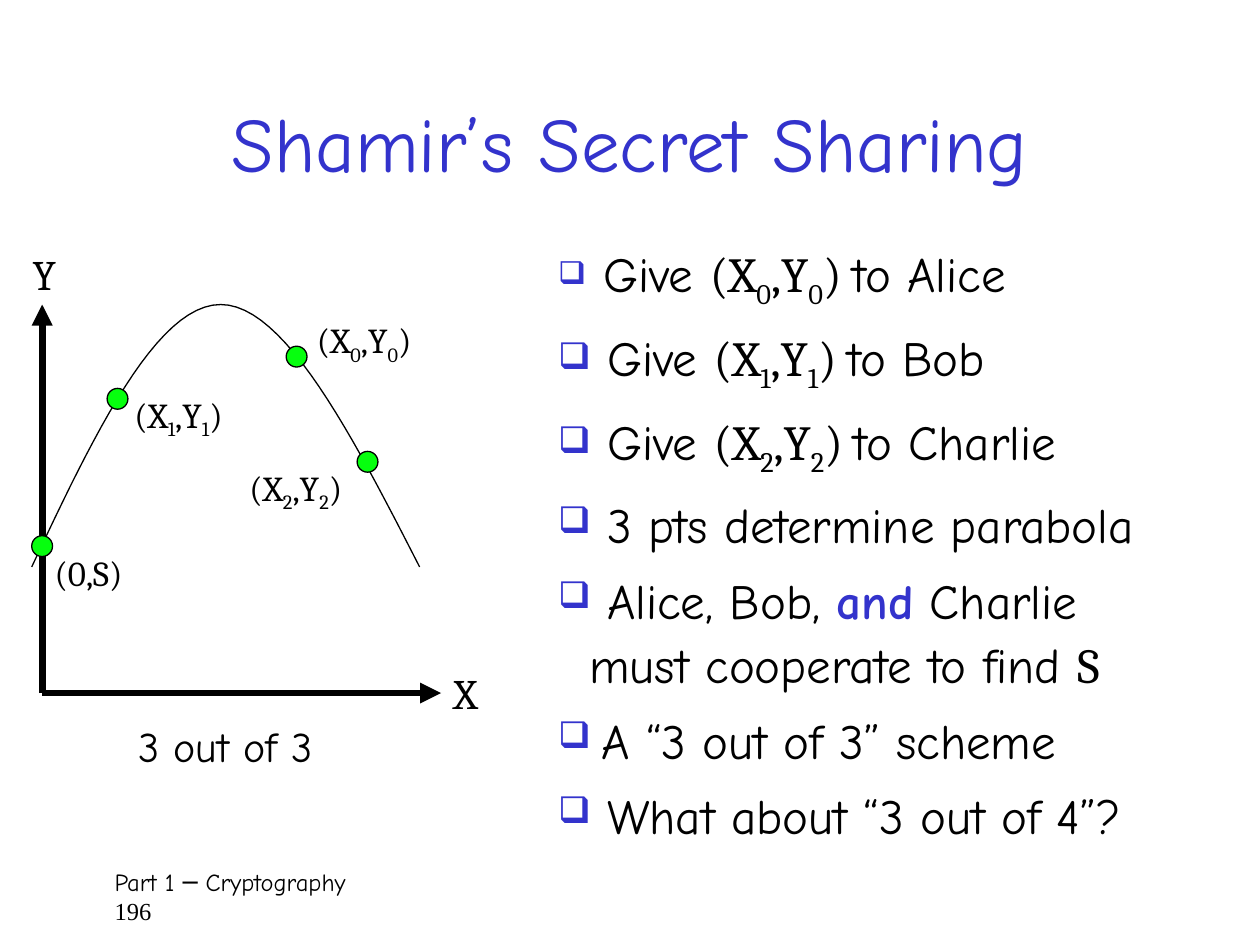
from lxml.etree import SubElement
from pptx import Presentation
from pptx.dml.color import RGBColor
from pptx.enum.shapes import MSO_CONNECTOR, MSO_SHAPE
from pptx.enum.text import MSO_ANCHOR, MSO_AUTO_SIZE, PP_ALIGN
from pptx.oxml.ns import qn
from pptx.util import Cm, Pt

SANS, MATH, ROMAN = "Comic Neue", "Cambria", "Times New Roman"
BLACK, BLUE, GREEN = "000000", "3333CC", "06FF0E"


def paint(code):
    return RGBColor.from_string(code)


def pair(n):
    """Runs of the point (Xn,Yn); True marks a subscript."""
    return [("(X", MATH), (n, MATH, True), (",Y", MATH), (n, MATH, True)]


def curve(a, b, c, d, steps=24):
    """Points along a cubic Bezier arc."""
    for i in range(steps + 1):
        t = i / steps
        u = 1 - t
        yield tuple(Cm(u**3 * p + 3 * u * u * t * q + 3 * u * t * t * r + t**3 * s)
                    for p, q, r, s in zip(a, b, c, d))


class Deck:
    def __init__(self):
        self.file = Presentation()
        self.file.slide_width, self.file.slide_height = Cm(25.4), Cm(19.05)
        self.slide = self.file.slides.add_slide(self.file.slide_layouts[6])
        self.shapes = self.slide.shapes

    def style(self, run, font, size, color=BLACK, sub=False, bold=False):
        run.font.name, run.font.size = font, Pt(size)
        run.font.color.rgb = paint(color)
        run.font.bold = bold
        if sub:
            run.font._element.set("baseline", "-25000")

    def text(self, box, lines, size, color=BLACK, wrap=False, grow=True):
        """Each line is a list of runs: text, font, subscript."""
        frame = self.shapes.add_textbox(*map(Cm, box)).text_frame
        frame.word_wrap = wrap
        if grow:
            frame.auto_size = MSO_AUTO_SIZE.SHAPE_TO_FIT_TEXT
        for i, line in enumerate(lines):
            para = frame.add_paragraph() if i else frame.paragraphs[0]
            for words, font, *sub in line:
                run = para.add_run()
                run.text = words
                self.style(run, font, size, color, sub=bool(sub))
        return frame

    def bullet(self, para):
        para.line_spacing, para.space_after = 1.1, Pt(6)
        props = para._p.get_or_add_pPr()
        props.set("marL", str(Cm(0.63)))
        props.set("indent", str(-Cm(0.63)))
        tint = SubElement(props, qn("a:buClr"))
        SubElement(tint, qn("a:srgbClr"), val=BLUE)
        SubElement(props, qn("a:buSzPct"), val="75000")
        SubElement(props, qn("a:buChar"), char="❑")

    def arrow(self, start, end):
        line = self.shapes.add_connector(
            MSO_CONNECTOR.STRAIGHT, *map(Cm, start + end))
        line.line.color.rgb, line.line.width = paint(BLACK), Pt(4)
        SubElement(line.line._get_or_add_ln(), qn("a:tailEnd"), type="triangle")
        SubElement(line._element.spPr, qn("a:effectLst"))

    def trim(self, shape):
        shape.shadow.inherit = False
        shape.line.color.rgb, shape.line.width = paint(BLACK), Pt(0.75)

    def path_of(self, points):
        first, *rest = points
        pen = self.shapes.build_freeform(*first, scale=1.0)
        pen.add_line_segments(rest, close=False)
        shape = pen.convert_to_shape()
        shape.fill.background()
        self.trim(shape)

    def dot(self, left, top):
        shape = self.shapes.add_shape(
            MSO_SHAPE.OVAL, Cm(left), Cm(top), Cm(0.42), Cm(0.42))
        shape.fill.solid()
        shape.fill.fore_color.rgb = paint(GREEN)
        self.trim(shape)


def main():
    deck = Deck()

    # Footer and title
    foot = deck.text((2.06, 17.35, 21.6, 1.27),
                     [[("Part 1 ─ Cryptography", SANS)], [("196", ROMAN)]],
                     14, wrap=True, grow=False)
    title = deck.text((1.9, 1.27, 21.6, 3.18),
                      [[("Shamir’s Secret Sharing", SANS)]],
                      44, BLUE, wrap=True, grow=False)
    title.vertical_anchor = MSO_ANCHOR.MIDDLE
    title.paragraphs[0].alignment = PP_ALIGN.CENTER

    # Axes
    base = (0.85, 13.97)
    deck.arrow(base, (8.89, 13.97))
    deck.arrow(base, (0.85, 6.14))
    for name, left, top in (("X", 8.89, 13.34), ("Y", 0.41, 4.88)):
        deck.text((left, top, 1.07, 1.27), [[(name, MATH)]], 24)

    # Parabola and its points
    peak = (4.45, 6.14)
    rise = curve((0.64, 11.43), (1.88, 8.79), (3.15, 6.14), peak)
    fall = curve(peak, (5.74, 6.14), (7.11, 8.79), (8.46, 11.43))
    deck.path_of([*rise, *list(fall)[1:]])
    for spot in ((0.64, 10.8), (2.16, 7.83), (5.77, 6.98), (7.2, 9.1)):
        deck.dot(*spot)

    # Point labels
    for n, left, top in (("0", 6.14, 6.3), ("1", 2.46, 7.8), ("2", 4.78, 9.27)):
        deck.text((left, top, 2.62, 1.09), [pair(n) + [(")", MATH)]], 20)
    deck.text((0.85, 11, 2.03, 1.09), [[("(0,S)", MATH)]], 20)
    deck.text((2.54, 14.4, 4.47, 1.45), [[("3 out of 3", SANS)]], 24)

    # Bullet list
    lines = [[(" ", SANS), ("Give ", SANS), *pair(n), (") ", MATH),
              (f"to {who}", SANS)]
             for n, who in zip("012", ("Alice", "Bob", "Charlie"))]
    lines += [
        [(" 3 pts determine parabola", SANS)],
        [(" Alice, Bob, ", SANS), ("and", SANS),
         (" Charlie must cooperate to find ", SANS), ("S", MATH)],
        [(" ", MATH), ("A “3 out of 3” scheme", SANS)],
        [(" What about “3 out of 4”?", SANS)],
    ]
    body = deck.text((11, 4.65, 13.13, 12.04), lines, 28, wrap=True)
    for para in body.paragraphs:
        deck.bullet(para)
    body.paragraphs[0].runs[0].font.size = Pt(24)
    deck.style(body.paragraphs[4].runs[1], SANS, 28, BLUE, bold=True)

    deck.file.save("out.pptx")


if __name__ == "__main__":
    main()
